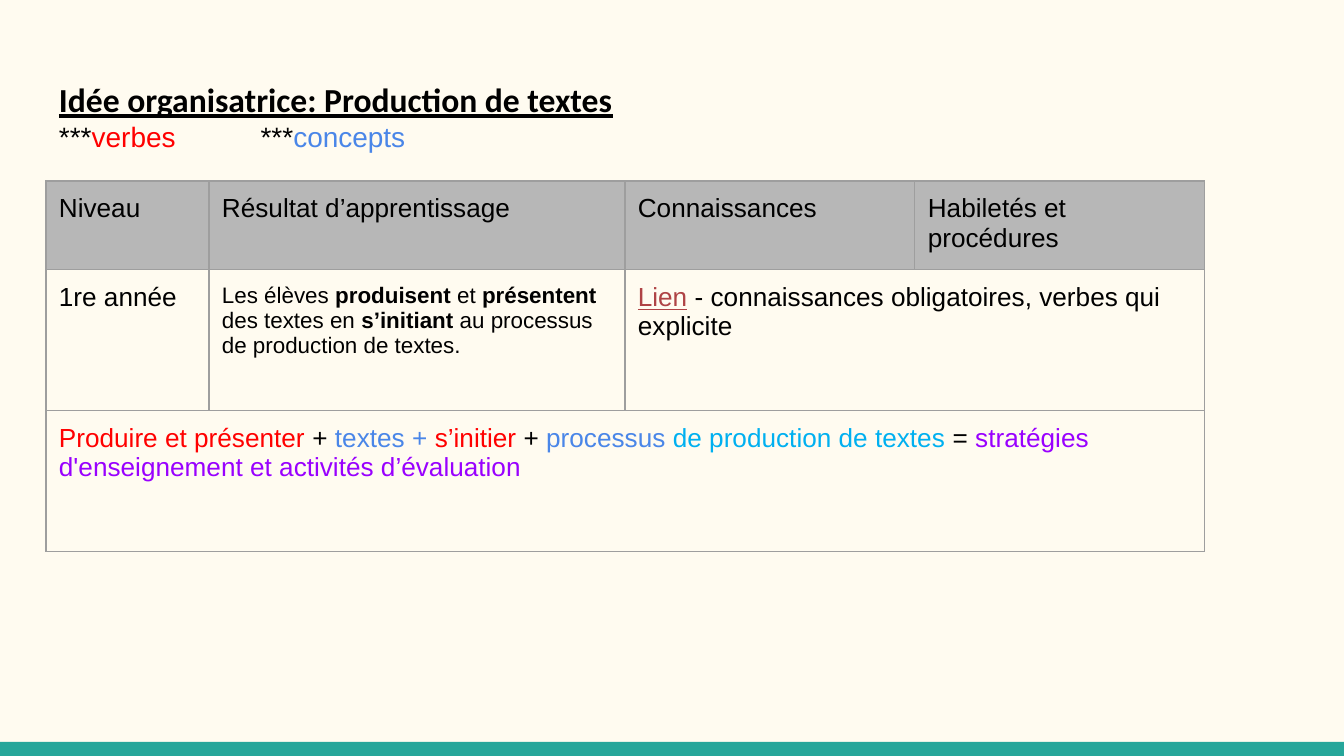
"""Build the slide on the organising idea of text production in grade one."""

import pptx
import pptx.dml.color
import pptx.enum.shapes
import pptx.enum.text
import pptx.oxml
import pptx.oxml.ns
import pptx.util

PX = 914400 / 134.4
INSET = 13
THEME = {
    "background": "FFFBF0", "band": "26A69A", "header": "B7B7B7", "border": "9E9E9E",
    "text": "000000", "verb": "FF0000", "concept": "4A86E8", "process": "00B0F0",
    "strategy": "9900FF", "link": "AF4345",
    "title_size": 18, "legend_size": 15, "table_size": 14, "outcome_size": 12,
    "title_font": "Calibri", "body_font": "Arial", "border_width": 0.75,
}


def px(length):
    return pptx.util.Emu(round(length * PX))


def write(paragraph, runs, size, font="body_font"):
    for text, color, *flags in runs:
        run = paragraph.add_run()
        run.text = text
        formats = {
            "name": THEME[font],
            "size": pptx.util.Pt(THEME[size]),
            "bold": "bold" in flags,
            "underline": "underline" in flags,
        }
        for attribute, value in formats.items():
            setattr(run.font, attribute, value)
        run.font.color.rgb = pptx.dml.color.RGBColor.from_string(THEME[color])


presentation = pptx.Presentation()
presentation.slide_width = px(1344)
presentation.slide_height = px(756)
slide = presentation.slides.add_slide(presentation.slide_layouts[6])
slide.background.fill.solid()
slide.background.fill.fore_color.rgb = pptx.dml.color.RGBColor.from_string(THEME["background"])

band = slide.shapes.add_shape(
    pptx.enum.shapes.MSO_SHAPE.RECTANGLE, px(0), px(742), px(1344), px(14)
)
band.shadow.inherit = False
band.fill.solid()
band.fill.fore_color.rgb = pptx.dml.color.RGBColor.from_string(THEME["band"])
band.line.fill.background()

margins = {f"margin_{side}": px(INSET) for side in ("left", "top", "right", "bottom")}

title_frame = slide.shapes.add_textbox(px(46), px(66), px(1252), px(90)).text_frame
frame_format = {
    **margins,
    "word_wrap": True,
    "vertical_anchor": pptx.enum.text.MSO_ANCHOR.TOP,
}
for attribute, value in frame_format.items():
    setattr(title_frame, attribute, value)
title_runs = [("Idée organisatrice: Production de textes", "text", "bold", "underline")]
write(title_frame.paragraphs[0], title_runs, "title_size", "title_font")
legend_runs = [
    ("***", "text"), ("verbes", "verb"), ("\t\t***", "text"), ("concepts", "concept"),
]
write(title_frame.add_paragraph(), legend_runs, "legend_size")

column_widths = [163, 416, 290, 290]
row_heights = [73, 141, 141]
headers = ["Niveau", "Résultat d’apprentissage", "Connaissances", "Habiletés et procédures"]
outcome_runs = [
    ("Les élèves ", "text"),
    ("produisent", "text", "bold"),
    (" et ", "text"),
    ("présentent", "text", "bold"),
    (" des textes en ", "text"),
    ("s’initiant ", "text", "bold"),
    ("au processus de production de textes.", "text"),
]
knowledge_runs = [
    ("Lien", "link", "underline"),
    (" - connaissances obligatoires, verbes qui explicite", "text"),
]
summary_runs = [
    ("Produire et présenter", "verb"),
    (" + ", "text"),
    ("textes + ", "concept"),
    ("s’initier", "verb"),
    (" + ", "text"),
    ("processus ", "concept"),
    ("de production de textes ", "process"),
    ("= ", "text"),
    ("stratégies d'enseignement et activités d’évaluation", "strategy"),
]
contents = {(0, column): ([(header, "text")], "table_size") for column, header in enumerate(headers)}
contents[1, 0] = ([("1re année", "text")], "table_size")
contents[1, 1] = (outcome_runs, "outcome_size")
contents[1, 2] = (knowledge_runs, "table_size")
contents[2, 0] = (summary_runs, "table_size")

table = slide.shapes.add_table(
    len(row_heights), len(column_widths),
    px(46), px(181), px(sum(column_widths)), px(sum(row_heights)),
).table
table.first_row = False
table.horz_banding = False
for column, width in zip(table.columns, column_widths):
    column.width = px(width)
for row, height in zip(table.rows, row_heights):
    row.height = px(height)

for row_index in range(len(row_heights)):
    for column_index in range(len(column_widths)):
        cell = table.cell(row_index, column_index)
        for attribute, value in margins.items():
            setattr(cell, attribute, value)
        properties = cell._tc.get_or_add_tcPr()
        for edge in ("lnL", "lnR", "lnT", "lnB"):
            properties.append(pptx.oxml.parse_xml(
                f'<a:{edge} {pptx.oxml.ns.nsdecls("a")} w="{pptx.util.Pt(THEME["border_width"])}">'
                f'<a:solidFill><a:srgbClr val="{THEME["border"]}"/></a:solidFill></a:{edge}>'
            ))
        if row_index == 0:
            cell.fill.solid()
            cell.fill.fore_color.rgb = pptx.dml.color.RGBColor.from_string(THEME["header"])
        else:
            cell.fill.background()
        if (row_index, column_index) in contents:
            runs, size = contents[row_index, column_index]
            write(cell.text_frame.paragraphs[0], runs, size)

table.cell(1, 2).merge(table.cell(1, 3))
table.cell(2, 0).merge(table.cell(2, 3))

presentation.save("out.pptx")
